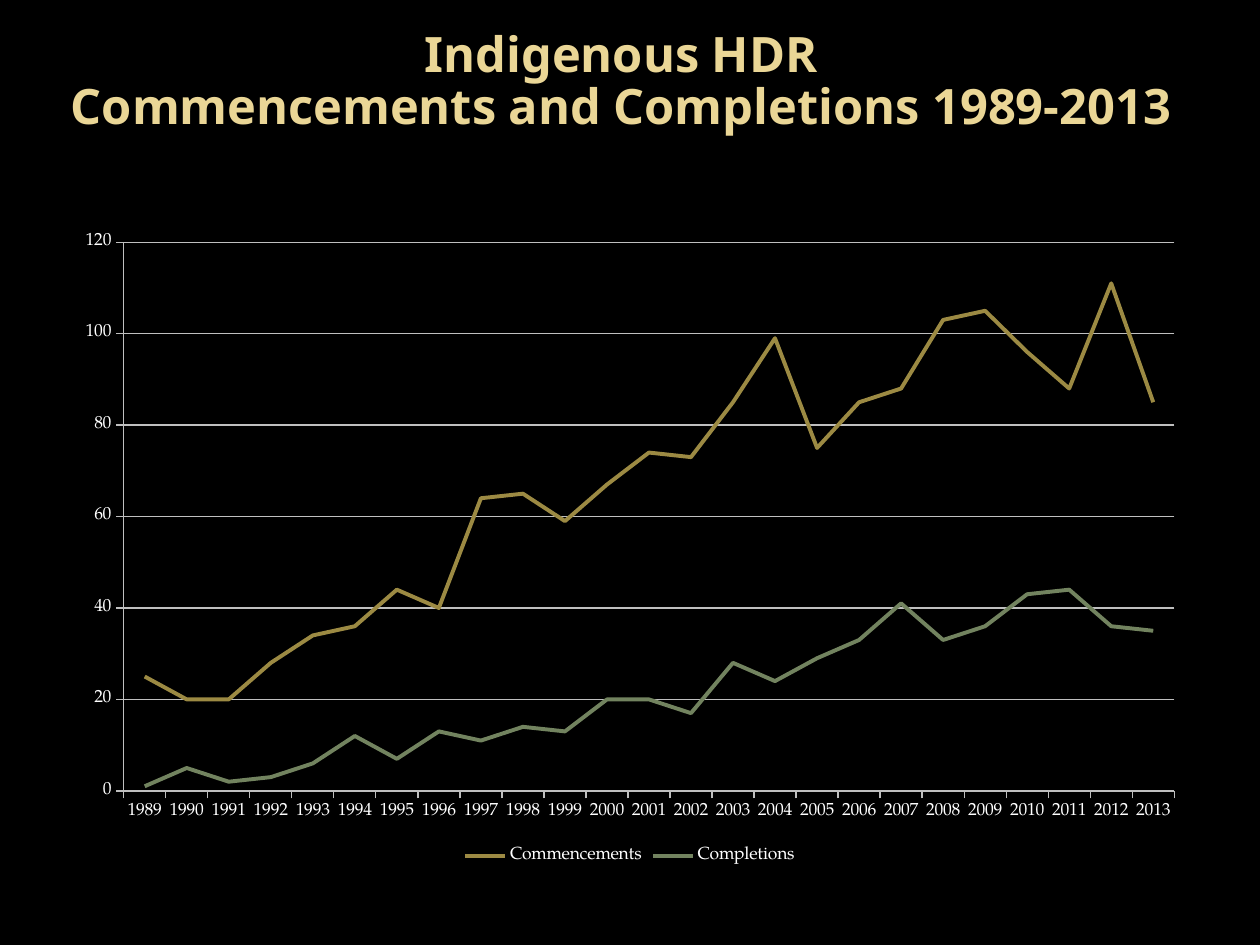
"""Build a slide with a line chart of Indigenous HDR commencements and completions."""
from pptx import Presentation
from pptx.chart.data import CategoryChartData
from pptx.dml.color import RGBColor
from pptx.enum.chart import XL_CHART_TYPE, XL_LEGEND_POSITION, XL_MARKER_STYLE, XL_TICK_MARK
from pptx.enum.text import MSO_ANCHOR, PP_ALIGN
from pptx.util import Cm, Pt

LINE_CHART = XL_CHART_TYPE.LINE
LEGEND_BOTTOM = XL_LEGEND_POSITION.BOTTOM
NO_MARKER = XL_MARKER_STYLE.NONE
TICK_OUTSIDE, TICK_NONE = XL_TICK_MARK.OUTSIDE, XL_TICK_MARK.NONE
MIDDLE = MSO_ANCHOR.MIDDLE
CENTER = PP_ALIGN.CENTER

BLACK = RGBColor(0x00, 0x00, 0x00)
WHITE = RGBColor(0xFF, 0xFF, 0xFF)
CREAM = RGBColor(0xEA, 0xD6, 0x96)
GREY = RGBColor(0xBF, 0xBF, 0xBF)
GOLD = RGBColor(0x9C, 0x8A, 0x43)
GREEN = RGBColor(0x72, 0x83, 0x5F)

YEARS = [str(year) for year in range(1989, 2014)]
COMMENCEMENTS = [25, 20, 20, 28, 34, 36, 44, 40, 64, 65, 59, 67, 74,
                 73, 85, 99, 75, 85, 88, 103, 105, 96, 88, 111, 85]
COMPLETIONS = [1, 5, 2, 3, 6, 12, 7, 13, 11, 14, 13, 20, 20,
               17, 28, 24, 29, 33, 41, 33, 36, 43, 44, 36, 35]


def format_font(font, name, size, color, bold=False):
    font.name = name
    font.size = Pt(size)
    font.bold = bold
    font.color.rgb = color


def format_line(line, color, width):
    line.color.rgb = color
    line.width = Pt(width)


deck = Presentation()
deck.slide_width, deck.slide_height = Cm(25.4), Cm(19.05)
page = deck.slides.add_slide(deck.slide_layouts[5])
page.background.fill.solid()
page.background.fill.fore_color.rgb = BLACK

title = page.shapes.title
title.left, title.top, title.width, title.height = Cm(0), Cm(0), Cm(25.3), Cm(3.33)
frame = title.text_frame
frame.word_wrap = True
frame.vertical_anchor = MIDDLE
frame.text = "Indigenous HDR \vCommencements and Completions 1989-2013 "
para = frame.paragraphs[0]
para.alignment = CENTER
para.line_spacing = 0.9
para.space_before = Pt(12)
for span in para.runs:
    format_font(span.font, "Noto Sans", 27.9, CREAM, bold=True)

data = CategoryChartData(number_format="###0")
data.categories = YEARS
data.add_series("Commencements", COMMENCEMENTS)
data.add_series("Completions", COMPLETIONS)
chart = page.shapes.add_chart(
    LINE_CHART, Cm(1.27), Cm(4.45), Cm(22.86), Cm(13.08), data).chart
format_font(chart.font, "TeX Gyre Pagella", 10, WHITE)
chart.has_title = False
chart.has_legend = True
chart.legend.position = LEGEND_BOTTOM
chart.legend.include_in_layout = False
chart.plots[0].vary_by_categories = False

for axis in (chart.category_axis, chart.value_axis):
    axis.major_tick_mark = TICK_OUTSIDE
    axis.minor_tick_mark = TICK_NONE
    format_line(axis.format.line, GREY, 0.75)
value_axis = chart.value_axis
value_axis.minimum_scale, value_axis.maximum_scale = 0, 120
value_axis.major_unit = 20
value_axis.has_major_gridlines = True
format_line(value_axis.major_gridlines.format.line, GREY, 0.75)
value_axis.tick_labels.number_format = "###0"
value_axis.tick_labels.number_format_is_linked = False

for series, color in zip(chart.plots[0].series, (GOLD, GREEN)):
    series.smooth = False
    series.marker.style = NO_MARKER
    format_line(series.format.line, color, 2.25)

deck.save("out.pptx")
